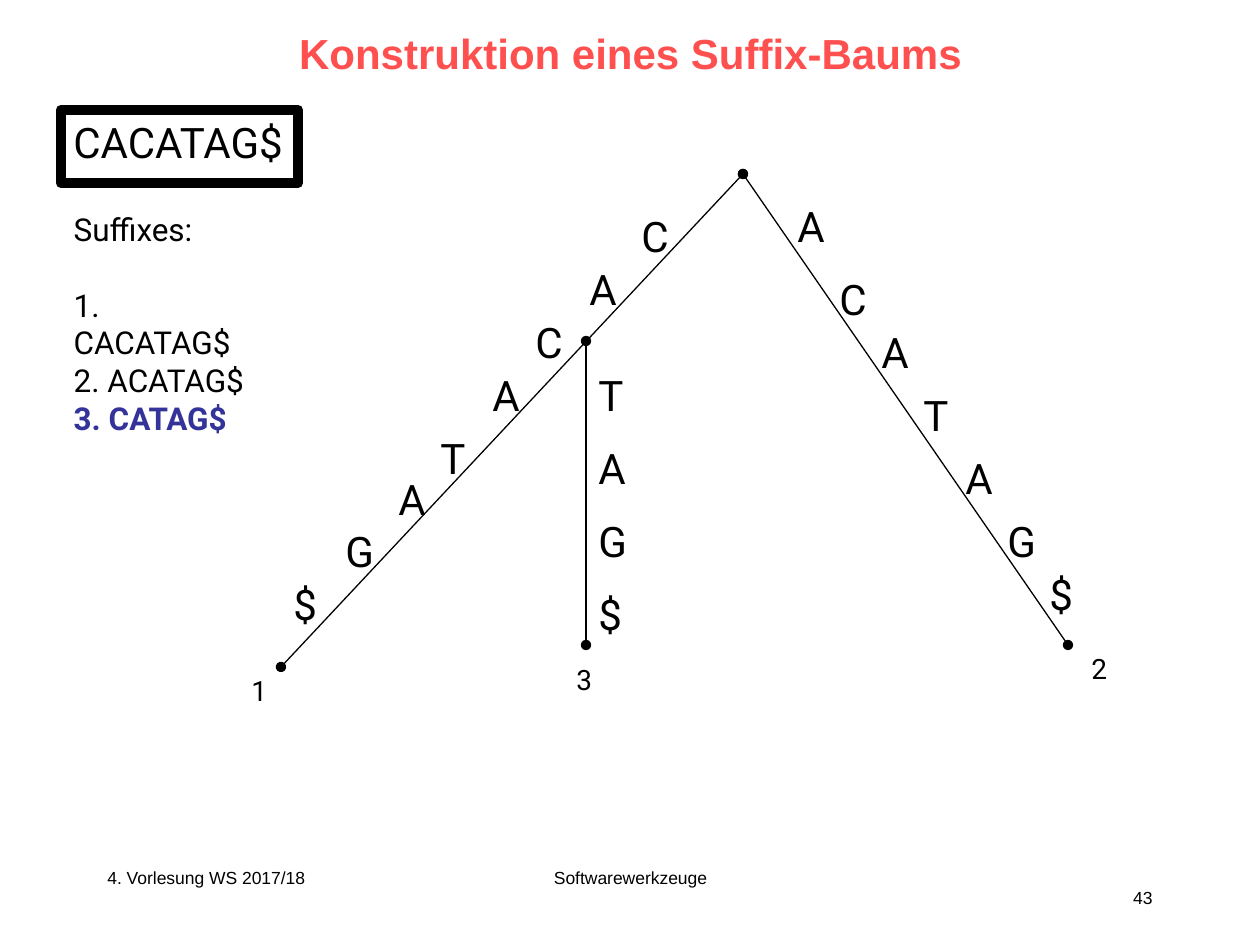
from lxml import etree
from pptx import Presentation
from pptx import util as u
from pptx.dml.color import RGBColor
from pptx.enum import shapes, text
from pptx.oxml.ns import qn

SCALE = 914400 / 126
BLACK = RGBColor(0x00, 0x00, 0x00)
CORAL = RGBColor(0xFF, 0x50, 0x50)
NAVY = RGBColor(0x33, 0x33, 0x99)
LEFT, MID, RIGHT = text.PP_ALIGN.LEFT, text.PP_ALIGN.CENTER, text.PP_ALIGN.RIGHT
WIDTHS = {"G": 53, "$": 48}

ROOT, FORK = (743, 174), (586, 341)
LEAVES = {"1": (281, 667), "2": (1068, 645), "3": (586, 645)}
EDGES = [(ROOT, LEAVES["1"]), (ROOT, LEAVES["2"]), (FORK, LEAVES["3"])]
LONG = zip("CACATAG$",
           (629, 577, 523, 480, 428, 386, 333, 281),
           (204, 257, 310, 363, 426, 467, 519, 572))
STEEP = zip("ACATAG$", range(785, 1038, 42),
            (194, 267, 320, 383, 446, 509, 562))
DOWN = zip("TAG$", [586] * 4, range(363, 583, 73))
MARKS = [("1", 239, 667), ("2", 1079, 645), ("3", 564, 656)]


def px(num):
    return u.Emu(round(num * SCALE))


def place(shape, *area):
    shape.left, shape.top, shape.width, shape.height = map(px, area)


def add_run(para, words, size, font="Roboto", color=BLACK, bold=False):
    run = para.add_run()
    run.text = words
    run.font.size = u.Pt(size)
    run.font.name = font
    run.font.bold = bold
    run.font.color.rgb = color


def add_text(slide, words, area, size, font="Roboto", align=LEFT, wrap=False):
    box = slide.shapes.add_textbox(*map(px, area))
    frame = box.text_frame
    frame.word_wrap = wrap
    para = frame.paragraphs[0]
    para.alignment = align
    add_run(para, words, size, font)
    return frame


def add_title(slide, words):
    title = slide.shapes.title
    place(title, 95, 21, 1071, 63)
    frame = title.text_frame
    frame.auto_size = text.MSO_AUTO_SIZE.NONE
    frame.vertical_anchor = text.MSO_ANCHOR.MIDDLE
    para = frame.paragraphs[0]
    para.alignment = MID
    add_run(para, words, 24, "Arial", CORAL, True)


def add_list(slide, head, items):
    body = slide.placeholders[1]
    place(body, 61, 204, 213, 202)
    frame = body.text_frame
    frame.auto_size = text.MSO_AUTO_SIZE.NONE
    frame.word_wrap = True
    for i, words in enumerate([head, *items]):
        para = frame.add_paragraph() if i else frame.paragraphs[0]
        para.alignment = LEFT
        para.space_before = u.Pt(21.5 if i == 1 else 0)
        props = para._p.get_or_add_pPr()
        props.set("marL", "0")
        props.set("indent", "0")
        etree.SubElement(props, qn("a:buNone"))
        last = i == len(items)
        add_run(para, words, 18, color=NAVY if last else BLACK, bold=last)


def add_frame(slide, words):
    rect = slide.shapes.add_shape(shapes.MSO_SHAPE.RECTANGLE,
                                  *map(px, (61, 110, 237, 73)))
    rect.shadow.inherit = False
    rect.fill.background()
    rect.line.color.rgb = BLACK
    rect.line.width = u.Pt(6)
    frame = rect.text_frame
    frame.word_wrap = False
    frame.vertical_anchor = text.MSO_ANCHOR.TOP
    para = frame.paragraphs[0]
    para.alignment = LEFT
    add_run(para, words, 24)


def add_edge(slide, start, end):
    edge = slide.shapes.add_connector(shapes.MSO_CONNECTOR.STRAIGHT,
                                      *map(px, start + end))
    edge.line.color.rgb = BLACK
    edge.line.width = u.Pt(0.75)
    props = edge.element.spPr
    line = props.find(qn("a:ln"))
    for tag in ("a:headEnd", "a:tailEnd"):
        etree.SubElement(line, qn(tag), type="oval")
    etree.SubElement(props, qn("a:effectLst"))


def add_foot(slide):
    add_text(slide, "4. Vorlesung WS 2017/18", (95, 861, 262, 63), 10,
             "Arial", wrap=True)
    add_text(slide, "Softwarewerkzeuge", (431, 861, 399, 63), 10,
             "Arial", MID, True)
    page = add_text(slide, "43", (903, 861, 262, 63), 10, "Arial", RIGHT, True)
    page.margin_top = px(26)


def main():
    deck = Presentation()
    deck.slide_width, deck.slide_height = px(1260), px(945)
    slide = deck.slides.add_slide(deck.slide_layouts[1])
    add_title(slide, "Konstruktion eines Suffix-Baums")
    add_list(slide, "Suffixes:", ["1. CACATAG$", "2. ACATAG$", "3. CATAG$"])
    add_frame(slide, "CACATAG$")
    for start, end in EDGES:
        add_edge(slide, start, end)
    for char, left, top in [*LONG, *STEEP, *DOWN]:
        add_text(slide, char, (left, top, WIDTHS.get(char, 50), 63), 24)
    for mark, left, top in MARKS:
        add_text(slide, mark, (left, top, 41, 47), 16)
    add_foot(slide)
    deck.save("out.pptx")


if __name__ == "__main__":
    main()
